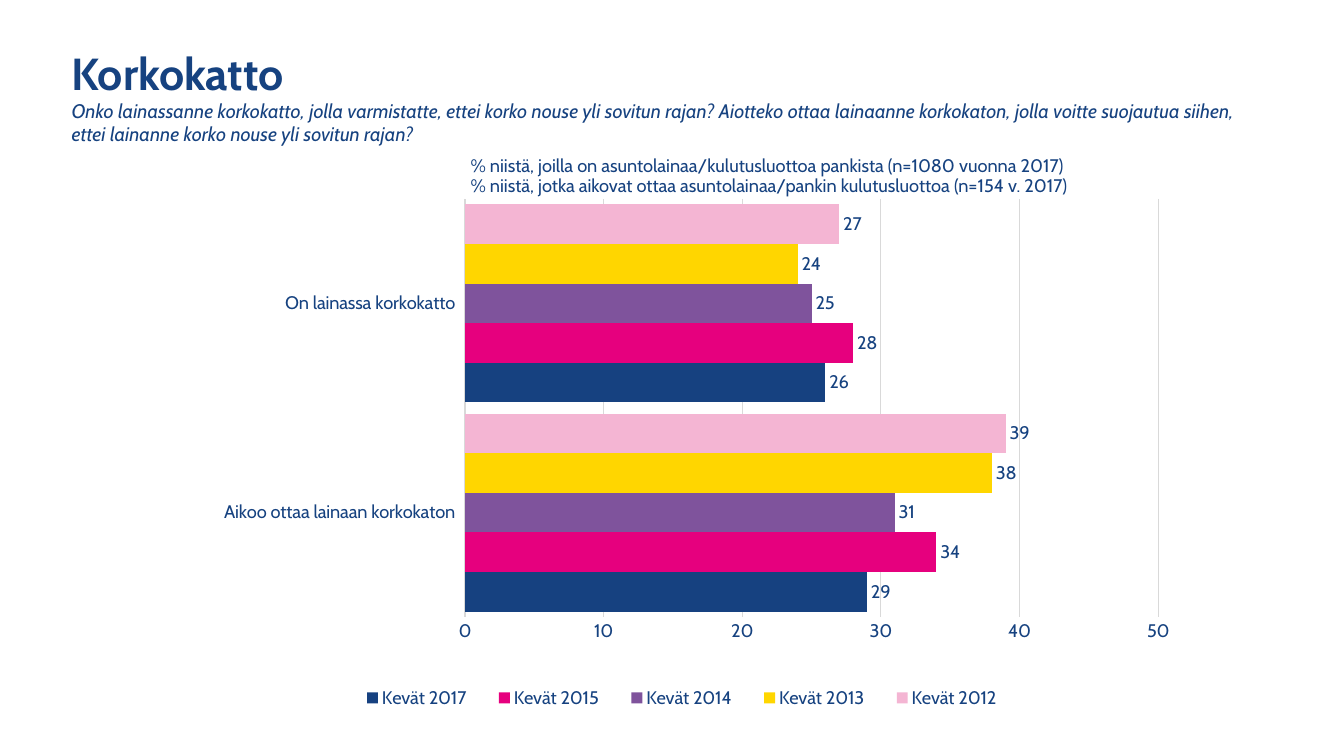
import pptx
import pptx.chart.data
import pptx.dml.color
import pptx.enum.chart
import pptx.enum.text
import pptx.oxml
import pptx.oxml.ns
import pptx.util

Pt = pptx.util.Pt
RGB = pptx.dml.color.RGBColor
NAVY = RGB(0x16, 0x42, 0x80)
GREY = RGB(0xD9, 0xD9, 0xD9)
FONT = "Cabin"
CATS = ["On lainassa korkokatto", "Aikoo ottaa lainaan korkokaton"]
WAVES = [
    ("Kevät 2012", (27, 39), RGB(0xF4, 0xB5, 0xD3)),
    ("Kevät 2013", (24, 38), RGB(0xFF, 0xD6, 0x00)),
    ("Kevät 2014", (25, 31), RGB(0x7F, 0x53, 0x9C)),
    ("Kevät 2015", (28, 34), RGB(0xE6, 0x00, 0x7E)),
    ("Kevät 2017", (26, 29), RGB(0x16, 0x41, 0x80)),
]
PLOT = {"x": 0.343, "y": 0.09, "w": 0.518, "h": 0.7}
KEYS = {"x": 0.25, "y": 0.89, "w": 0.51, "h": 0.07}
TITLE = "Korkokatto"
ASK = ("Onko lainassanne korkokatto, jolla varmistatte, ettei korko nouse yli "
       "sovitun rajan? Aiotteko ottaa lainaanne korkokaton, jolla voitte "
       "suojautua siihen, ettei lainanne korko nouse yli sovitun rajan?")
BASES = [
    "% niistä, joilla on asuntolainaa/kulutusluottoa pankista (n=1080 vuonna 2017)",
    "% niistä, jotka aikovat ottaa asuntolainaa/pankin kulutusluottoa (n=154 v. 2017)",
]


def style(font, size, bold=False, italic=False):
    font.name, font.size = FONT, Pt(size)
    font.bold, font.italic = bold, italic
    font.color.rgb = NAVY


def write(slide, box, lines, size, wrap=True, inset=9.36, lead=None, **form):
    frame = slide.shapes.add_textbox(*map(Pt, box)).text_frame
    frame.word_wrap = wrap
    frame.auto_size = pptx.enum.text.MSO_AUTO_SIZE.SHAPE_TO_FIT_TEXT
    frame.margin_left, frame.margin_right = Pt(inset), Pt(9.36)
    frame.margin_top = frame.margin_bottom = Pt(4.7)
    for i, line in enumerate(lines):
        para = frame.add_paragraph() if i else frame.paragraphs[0]
        para.line_spacing = lead
        run = para.add_run()
        run.text = line
        style(run.font, size, **form)


def place(part, spot, index, inner=False):
    ns = "http://schemas.openxmlformats.org/drawingml/2006/chart"
    target = '<c:layoutTarget val="inner"/>' if inner else ""
    modes = "".join(f'<c:{k}Mode val="edge"/>' for k in "xy")
    sides = "".join(f'<c:{k} val="{v}"/>' for k, v in spot.items())
    for old in part.findall(f"{{{ns}}}layout"):
        part.remove(old)
    part.insert(index, pptx.oxml.parse_xml(
        f'<c:layout xmlns:c="{ns}"><c:manualLayout>'
        f'{target}{modes}{sides}</c:manualLayout></c:layout>'))


def graph(slide, box):
    enum = pptx.enum.chart
    data = pptx.chart.data.CategoryChartData()
    data.categories = CATS
    for name, vals, _ in WAVES:
        data.add_series(name, vals)
    chart = slide.shapes.add_chart(
        enum.XL_CHART_TYPE.BAR_CLUSTERED, *map(Pt, box), data).chart
    style(chart.font, 13)
    chart.has_title = False
    chart.has_legend = True
    chart.legend.position = enum.XL_LEGEND_POSITION.BOTTOM
    chart.legend.include_in_layout = False
    style(chart.legend.font, 13)

    plot = chart.plots[0]
    plot.gap_width = 28
    plot.vary_by_categories = False
    for bars, (_, _, hue) in zip(plot.series, WAVES):
        bars.format.fill.solid()
        bars.format.fill.fore_color.rgb = hue
        bars.invert_if_negative = False
        marks = bars.data_labels
        marks.show_value = True
        marks.position = enum.XL_LABEL_POSITION.OUTSIDE_END
        style(marks.font, 13)

    cat, val = chart.category_axis, chart.value_axis
    for axis in (cat, val):
        axis.major_tick_mark = axis.minor_tick_mark = enum.XL_TICK_MARK.NONE
        style(axis.tick_labels.font, 13)
    cat.reverse_order = True
    cat.tick_label_position = enum.XL_TICK_LABEL_POSITION.LOW
    cat.format.line.color.rgb = GREY
    cat.format.line.width = Pt(0.25)
    val.minimum_scale, val.maximum_scale, val.major_unit = 0, 50, 10
    val.format.line.fill.background()
    val.has_major_gridlines = True
    val.major_gridlines.format.line.color.rgb = GREY
    val.major_gridlines.format.line.width = Pt(0.75)
    val._element.find(pptx.oxml.ns.qn("c:crosses")).set("val", "max")
    place(plot._element.getparent(), PLOT, 0, inner=True)
    place(chart.legend._element, KEYS, 1)


def results(slide, box):
    left, top, wide, high = box
    graph(slide, box)
    write(slide, (left + 328.4, top + 3.6, 620, 38), BASES, 13,
          inset=3.6, lead=0.9)


def header(slide, box):
    left, top, wide, high = box
    write(slide, (left, top, 189.4, 48), [TITLE], 32, wrap=False, bold=True)
    write(slide, (left, top + 37.8, wide, high - 37.8), [ASK], 14, italic=True)


def main():
    deck = pptx.Presentation()
    deck.slide_width, deck.slide_height = Pt(960), Pt(540)
    slide = deck.slides.add_slide(deck.slide_layouts[6])
    results(slide, (4.2, 103.6, 956, 427))
    header(slide, (41.8, 28.1, 874, 82))
    deck.save("out.pptx")


if __name__ == "__main__":
    main()
